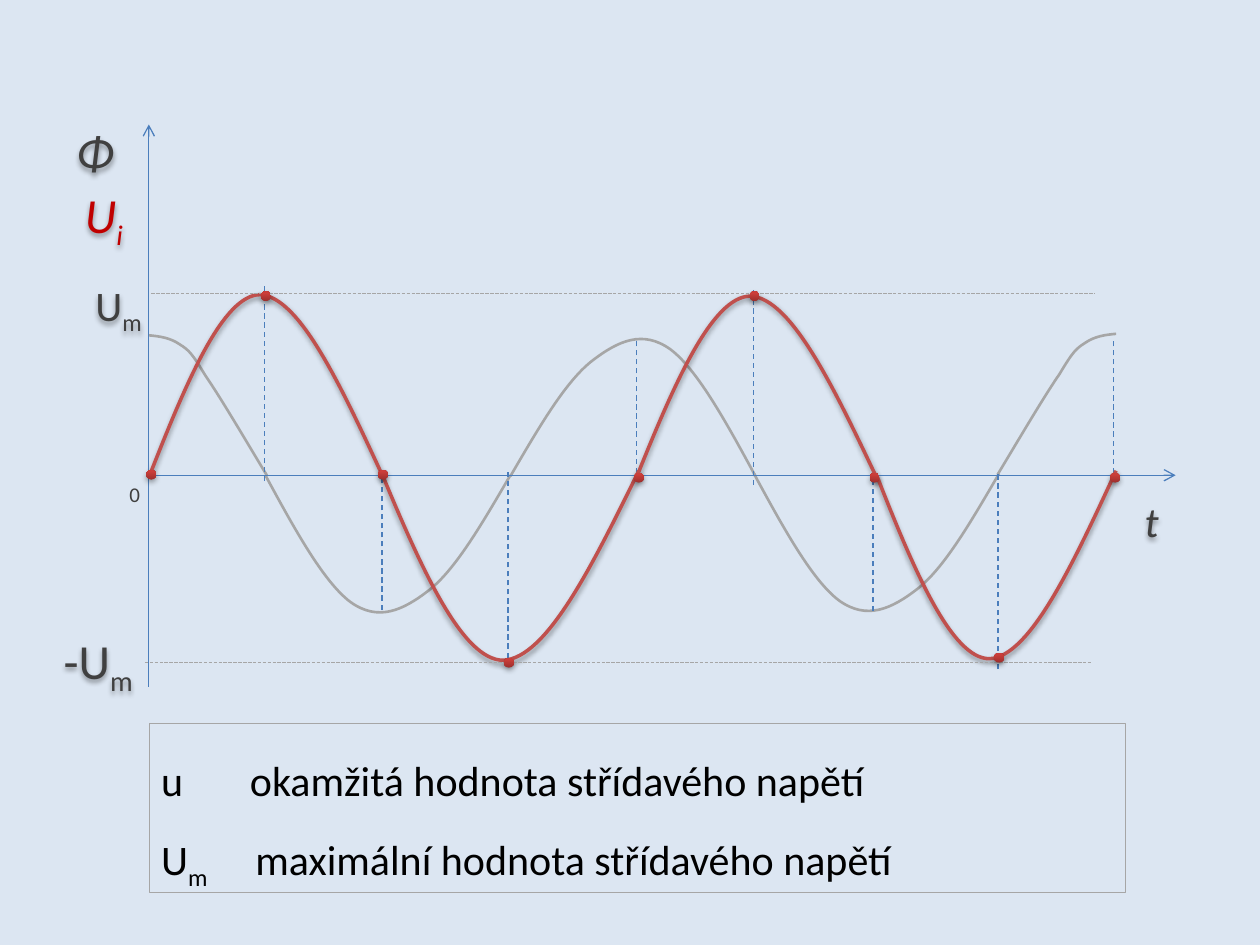
from lxml import etree
from pptx import Presentation
from pptx.dml.color import RGBColor
from pptx.enum.dml import MSO_LINE
from pptx.enum.shapes import MSO_CONNECTOR, MSO_SHAPE
from pptx.enum.text import MSO_ANCHOR, MSO_AUTO_SIZE, PP_ALIGN
from pptx.oxml.ns import qn
from pptx.util import Cm, Pt

STRAIGHT = MSO_CONNECTOR.STRAIGHT
RECT, OVAL = MSO_SHAPE.RECTANGLE, MSO_SHAPE.OVAL
DASH, LONG_DASH = MSO_LINE.DASH, MSO_LINE.LONG_DASH
LEFT, CENTER = PP_ALIGN.LEFT, PP_ALIGN.CENTER
TOP = MSO_ANCHOR.TOP

BLUE, GREY, RED, DARK, DARK_RED = "4B7EBC", "A6A6A6", "C0504D", "404040", "C00000"

# Bezier points relative to the start of each curve
FLUX_HALF = [(0, 0), (.55, -.94), (1.09, -1.88), (1.63, -2.31), (2.18, -2.74),
             (2.67, -2.95), (3.22, -2.56), (3.76, -2.16), (4.35, -1.09), (4.94, 0)]
FLUX_QUARTER = [(0, 0), (.22, .02), (.43, .05), (.62, .18), (.81, .3),
                (.87, .36), (1.14, .81), (1.45, 1.26), (1.92, 2.06), (2.39, 2.84)]
# Voltage half wave, one unit wide and one unit high
VOLTAGE_HALF = [(0, 0), (.15, -.5), (.31, -1), (.47, -1), (.64, -.99), (.82, -.48), (1, .03)]


def rgb(color):
    return RGBColor.from_string(color)


def sub(parent, tag, **attrs):
    return etree.SubElement(parent, qn(tag), attrs)


class Chart:
    font = "Calibri"

    def __init__(self, prs, background):
        self.s = prs.slides.add_slide(prs.slide_layouts[6])
        fill = self.s.background.fill
        fill.solid()
        fill.fore_color.rgb = rgb(background)

    def stroke(self, sp, color, width, dash=None):
        sp.line.color.rgb = rgb(color)
        sp.line.width = Pt(width)
        if dash:
            sp.line.dash_style = dash

    def shadow(self, sp, alpha=38):
        sp.shadow.inherit = False
        effects = sp._element.spPr.find(qn("a:effectLst"))
        outer = sub(effects, "a:outerShdw", blurRad=str(Pt(3.1)), dist=str(Pt(1.6)),
                    dir="5400000", rotWithShape="0")
        sub(sub(outer, "a:srgbClr", val="000000"), "a:alpha", val=str(alpha * 1000))

    def line(self, x1, y1, x2, y2, color=BLUE, width=.75, dash=None, arrow=False):
        c = self.s.shapes.add_connector(STRAIGHT, Cm(x1), Cm(y1), Cm(x2), Cm(y2))
        self.stroke(c, color, width, dash)
        if arrow:
            sub(c.line._get_or_add_ln(), "a:tailEnd", type="arrow")
        sub(c._element.spPr, "a:effectLst")

    def curve(self, x, y, points, sx, sy, color, width, shadow=False):
        pts = [(Cm(x + sx * px), Cm(y + sy * py)) for px, py in points]
        builder = self.s.shapes.build_freeform(*pts[0])
        builder.add_line_segments(pts[1:], close=False)
        sp = builder.convert_to_shape()
        # Every three points become one cubic segment
        segments = list(sp._element.iter(qn("a:lnTo")))
        for i in range(0, len(segments), 3):
            cubic = etree.Element(qn("a:cubicBezTo"))
            segments[i].addprevious(cubic)
            for segment in segments[i:i + 3]:
                cubic.append(segment[0])
                segment.getparent().remove(segment)
        sp.fill.background()
        self.stroke(sp, color, width)
        sp.shadow.inherit = False
        if shadow:
            self.shadow(sp)

    def dot(self, x, y, d=.2):
        sp = self.s.shapes.add_shape(OVAL, Cm(x), Cm(y), Cm(d), Cm(d))
        sp.fill.gradient()
        sp.fill.gradient_angle = 90
        for stop, position, color in zip(sp.fill.gradient_stops, (0, .8), ("9C2F2D", "CB3E3A")):
            stop.position = position
            stop.color.rgb = rgb(color)
        sp.line.fill.background()
        self.shadow(sp, 35)

    def runs(self, p, parts, size, color, italic=False, align=LEFT):
        p.alignment = align
        p.line_spacing = 1.5
        for text, lowered in parts:
            r = p.add_run()
            r.text = text
            r.font.name, r.font.size, r.font.italic = self.font, Pt(size), italic
            r.font.color.rgb = rgb(color)
            if lowered:
                r._r.get_or_add_rPr().set("baseline", "-25000")

    def label(self, x, y, w, h, parts, size, color=DARK, italic=False, shadow=True):
        sp = self.s.shapes.add_textbox(Cm(x), Cm(y), Cm(w), Cm(h))
        tf = sp.text_frame
        tf.word_wrap = False
        p = tf.paragraphs[0]
        self.runs(p, parts, size, color, italic, CENTER)
        p.space_before = Pt(5.8)
        pPr = p._p.get_or_add_pPr()
        pPr.set("marL", str(Cm(.76)))
        pPr.set("indent", str(-Cm(.76)))
        if shadow:
            self.shadow(sp)

    def legend(self, x, y, w, h, rows):
        sp = self.s.shapes.add_shape(RECT, Cm(x), Cm(y), Cm(w), Cm(h))
        sp.shadow.inherit = False
        sp.fill.background()
        self.stroke(sp, GREY, .25)
        tf = sp.text_frame
        tf.word_wrap = True
        tf.auto_size = MSO_AUTO_SIZE.SHAPE_TO_FIT_TEXT
        tf.vertical_anchor = TOP
        tf.margin_bottom = Cm(.2)
        for i, (tab, parts) in enumerate(rows):
            p = tf.add_paragraph() if i else tf.paragraphs[0]
            self.runs(p, parts, 24, "000000")
            tabs = sub(p._p.get_or_add_pPr(), "a:tabLst")
            sub(tabs, "a:tab", pos=str(Cm(tab)), algn="l")


def main():
    prs = Presentation()
    prs.slide_width, prs.slide_height = Cm(25.4), Cm(19.05)
    c = Chart(prs, "DCE6F2")

    # Magnetic flux
    for x, y, sign in [(10.29, 9.58, -1), (10.29, 9.6, 1), (20.14, 9.55, -1)]:
        c.curve(x, y, FLUX_HALF, sign, sign, GREY, 1.5)
    for x, y, sx in [(3, 6.76, 1), (22.5, 6.73, -1)]:
        c.curve(x, y, FLUX_QUARTER, sx, 1, GREY, 1.5)

    # Dashed verticals at the extremes
    for x, y1, y2 in [(5.33, 9.7, 5.74), (15.19, 9.78, 5.82), (20.12, 13.49, 9.53),
                      (22.45, 9.53, 6.81), (10.24, 13.44, 9.47), (12.83, 9.53, 6.81),
                      (17.6, 12.32, 9.63), (7.7, 12.29, 9.6)]:
        c.line(x, y1, x, y2, dash=DASH)

    # Induced voltage
    for x, y, w, h in [(3.05, 9.5, 4.67, 3.56), (12.85, 9.58, 4.85, 3.61),
                       (7.72, 9.6, 5.16, -3.71), (17.68, 9.6, 4.82, -3.68)]:
        c.curve(x, y, VOLTAGE_HALF, w, h, RED, 2, shadow=True)

    # Axes and amplitude limits
    c.line(3, 13.84, 3, 2.51, arrow=True)
    c.line(3, 9.58, 23.7, 9.58, arrow=True)
    c.line(3.05, 5.92, 22.07, 5.92, GREY, .25, LONG_DASH)
    c.line(2.92, 13.34, 22.02, 13.34, GREY, .25, LONG_DASH)

    # Points on the voltage curve
    for x, y in [(2.95, 9.47), (5.26, 5.87), (7.62, 9.47), (10.16, 13.26), (12.78, 9.53),
                 (15.11, 5.87), (17.53, 9.53), (20.04, 13.16), (22.38, 9.53)]:
        c.dot(x, y)

    # Axis labels, wide enough to stay on one line
    c.label(2.03, 9.32, 1.37, .97, [("0", False)], 12, shadow=False)
    c.label(.51, 2.92, 3.3, 1.57, [("U", False), ("i ", True)], 28, DARK_RED, True)
    c.label(22.15, 9.35, 2.13, 1.57, [("t", False)], 24, italic=True)
    c.label(.91, 1.73, 2.01, 1.57, [("Φ", False)], 28, italic=True)
    c.label(.38, 11.91, 3.2, .97, [("-U", False), ("m", True)], 28)
    c.label(.79, 4.93, 3.2, .97, [("U", False), ("m", True)], 24)

    # Legend
    c.legend(3, 14.58, 19.69, 3.4, [
        (1.79, [("u\tokamžitá hodnota střídavého napětí", False)]),
        (1.9, [("U", False), ("m", True), ("\tmaximální hodnota střídavého napětí", False)]),
    ])
    prs.save("out.pptx")


if __name__ == "__main__":
    main()
